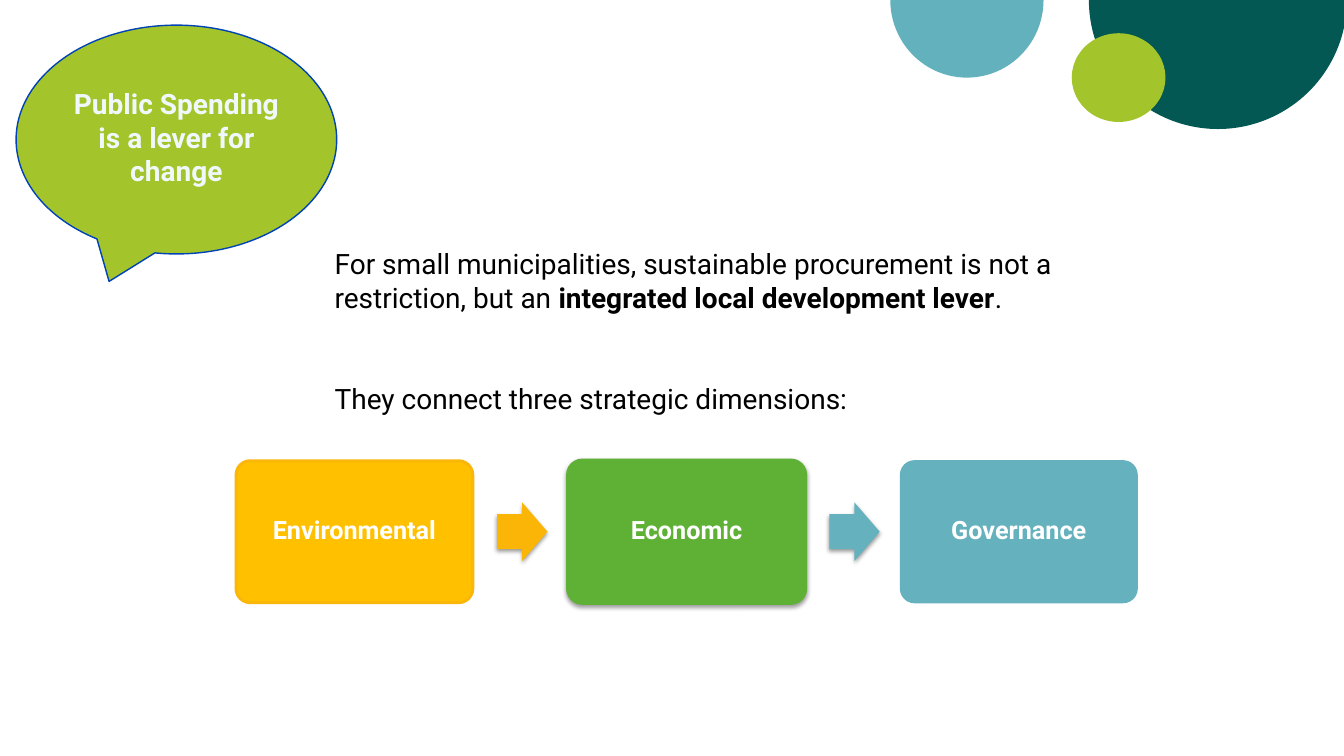
"""Build the slide on public spending as a lever for change."""
import pptx
import pptx.util
import pptx.dml.color
import pptx.enum.shapes
import pptx.enum.text
import pptx.oxml.ns
import lxml.etree

RGBColor = pptx.dml.color.RGBColor
SHAPE = pptx.enum.shapes.MSO_SHAPE
CENTER = pptx.enum.text.PP_ALIGN.CENTER
MIDDLE = pptx.enum.text.MSO_ANCHOR.MIDDLE

PINE = RGBColor(0x03, 0x58, 0x54)
SKY = RGBColor(0x64, 0xB1, 0xBE)
LIME = RGBColor(0xA3, 0xC4, 0x2A)
BLUE = RGBColor(0x00, 0x43, 0xB5)
ICE = RGBColor(0xF0, 0xF8, 0xFC)
BLACK = RGBColor(0x00, 0x00, 0x00)
WHITE = RGBColor(0xFF, 0xFF, 0xFF)
AMBER = RGBColor(0xFF, 0xC0, 0x00)
AMBER_EDGE = RGBColor(0xFA, 0xB6, 0x09)
AMBER_ARROW = RGBColor(0xFA, 0xB5, 0x06)
GREEN = RGBColor(0x5F, 0xB1, 0x35)
TEAL = RGBColor(0x65, 0xB1, 0xBE)

GRID = pptx.util.Inches(0.1)
CARD_LEFT, CARD_TOP, CARD_WIDTH, CARD_HEIGHT = 23.4, 45.7, 23.5, 14.1
CARD_PITCH = 32.95
ARROW_WIDTH, ARROW_HEIGHT = 5, 5.8
ARROW_OFFSET = CARD_WIDTH + 2.4
ARROW_TOP = CARD_TOP + (CARD_HEIGHT - ARROW_HEIGHT) / 2

deck = pptx.Presentation()
deck.slide_width = pptx.util.Inches(13.33)
deck.slide_height = pptx.util.Inches(7.5)
slide = deck.slides.add_slide(deck.slide_layouts[6])


def add_figure(kind, cells, fill, adjustments=(), edge=None, edge_width=1, shaded=False):
    """Draw a filled preset shape placed in grid cells."""
    figure = slide.shapes.add_shape(kind, *(round(cell * GRID) for cell in cells))
    for position, value in enumerate(adjustments):
        figure.adjustments[position] = value
    figure.fill.solid()
    figure.fill.fore_color.rgb = fill
    if edge is None:
        figure.line.fill.background()
    else:
        figure.line.color.rgb = edge
        figure.line.width = pptx.util.Pt(edge_width)
    figure.shadow.inherit = False
    if shaded:
        qn = pptx.oxml.ns.qn
        effects = figure.element.spPr.find(qn("a:effectLst"))
        shade = lxml.etree.SubElement(
            effects, qn("a:outerShdw"), blurRad=str(pptx.util.Pt(3.1)),
            dist=str(pptx.util.Pt(1.6)), dir="5400000", rotWithShape="0")
        black = lxml.etree.SubElement(shade, qn("a:srgbClr"), val="000000")
        lxml.etree.SubElement(black, qn("a:alpha"), val="38000")
    return figure


def add_run(paragraph, wording, size, color, bold=False):
    """Append one formatted run to a paragraph."""
    run = paragraph.add_run()
    run.text = wording
    run.font.name = "Roboto"
    run.font.size = pptx.util.Pt(size)
    run.font.color.rgb = color
    run.font.bold = bold


add_figure(SHAPE.PIE, (108, -12.8, 25.6, 25.6), PINE, (0, 108))
add_figure(SHAPE.PIE, (88.3, -7.7, 15.2, 15.4), SKY, (0, 108))
add_figure(SHAPE.OVAL, (106.3, 3.3, 9.3, 8.8), LIME)

message = add_figure(SHAPE.OVAL_CALLOUT, (1.6, 2.5, 31.8, 22.7), LIME, (-0.21, 0.62), BLUE)
message.text_frame.word_wrap = True
message.text_frame.vertical_anchor = MIDDLE
message.text_frame.margin_bottom = GRID
message.text_frame.paragraphs[0].alignment = CENTER
add_run(message.text_frame.paragraphs[0], "Public Spending is a lever for change", 20, ICE, True)

statement = slide.shapes.add_textbox(*(round(cell * GRID) for cell in (32.2, 24, 77.8, 17.8))).text_frame
statement.word_wrap = True
claim = statement.paragraphs[0]
add_run(claim, "For small municipalities, sustainable procurement is not a restriction, but an ", 20, BLACK)
add_run(claim, "integrated local development lever", 20, BLACK, True)
add_run(claim, ".", 20, BLACK)
lead_in = statement.add_paragraph()
lead_in.space_before = pptx.util.Pt(48)
add_run(lead_in, "They connect three strategic dimensions:", 20, BLACK)

dimensions = [
    ("Environmental", AMBER, AMBER_EDGE, 2, False, AMBER_ARROW),
    ("Economic", GREEN, GREEN, 3, True, TEAL),
    ("Governance", TEAL, TEAL, 0.75, False, None),
]
for column, (dimension, fill, edge, edge_width, shaded, arrow_fill) in enumerate(dimensions):
    left = CARD_LEFT + column * CARD_PITCH
    card = add_figure(SHAPE.ROUNDED_RECTANGLE, (left, CARD_TOP, CARD_WIDTH, CARD_HEIGHT),
                      fill, (0.1,), edge, edge_width, shaded)
    card.text_frame.word_wrap = True
    card.text_frame.vertical_anchor = MIDDLE
    label = card.text_frame.paragraphs[0]
    label.alignment = CENTER
    label.line_spacing = 0.9
    add_run(label, dimension, 18, WHITE, True)
    if arrow_fill is not None:
        add_figure(SHAPE.RIGHT_ARROW, (left + ARROW_OFFSET, ARROW_TOP, ARROW_WIDTH, ARROW_HEIGHT),
                   arrow_fill, (0.6, 0.5), shaded=True)

deck.save("out.pptx")
